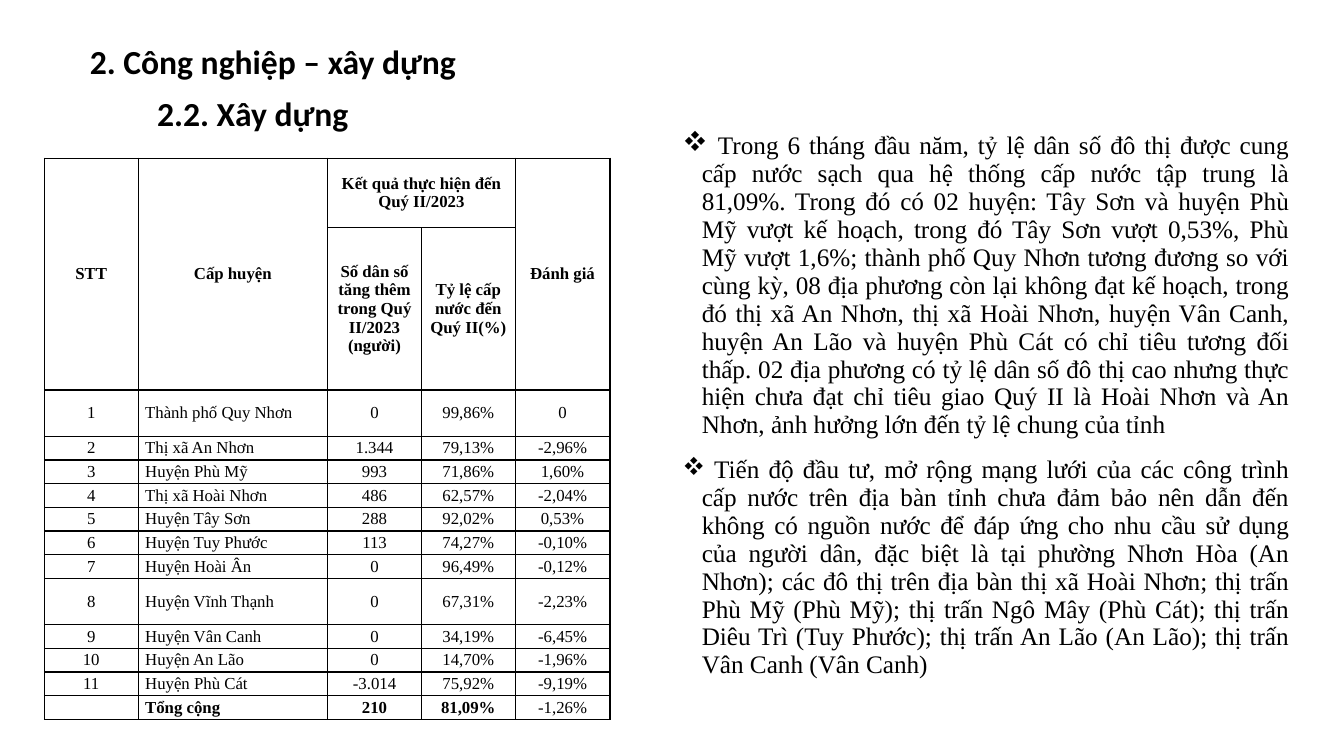
import pptx
import pptx.dml.color
import pptx.enum.text
import pptx.oxml.ns
import pptx.util
from lxml import etree

Inches = pptx.util.Inches
Pt = pptx.util.Pt
Align = pptx.enum.text.PP_ALIGN
Anchor = pptx.enum.text.MSO_ANCHOR
qn = pptx.oxml.ns.qn

HEADING = "2. Công nghiệp – xây dựng"
SUBHEADING = "2.2. Xây dựng"
HEADER_ROWS = [
    ["STT", "Cấp huyện", "Kết quả thực hiện đến Quý II/2023", "", "Đánh giá"],
    ["", "", "Số dân số tăng thêm trong Quý II/2023\v(người)",
     "Tỷ lệ cấp nước đến Quý II(%)", ""],
]
HEADER_SPANS = [((0, 0), (1, 0)), ((0, 1), (1, 1)), ((0, 2), (0, 3)), ((0, 4), (1, 4))]
DISTRICTS = [
    ("Thành phố Quy Nhơn", "0", "99,86%", "0"),
    ("Thị xã An Nhơn", "1.344", "79,13%", "-2,96%"),
    ("Huyện Phù Mỹ", "993", "71,86%", "1,60%"),
    ("Thị xã Hoài Nhơn", "486", "62,57%", "-2,04%"),
    ("Huyện Tây Sơn", "288", "92,02%", "0,53%"),
    ("Huyện Tuy Phước", "113", "74,27%", "-0,10%"),
    ("Huyện Hoài Ân", "0", "96,49%", "-0,12%"),
    ("Huyện Vĩnh Thạnh", "0", "67,31%", "-2,23%"),
    ("Huyện Vân Canh", "0", "34,19%", "-6,45%"),
    ("Huyện An Lão", "0", "14,70%", "-1,96%"),
    ("Huyện Phù Cát", "-3.014", "75,92%", "-9,19%"),
]
TOTAL = ["", "Tổng cộng", "210", "81,09%", "-1,26%"]
COLUMN_WIDTHS = [0.93, 1.88, 0.93, 0.93, 0.94]
TABLE_HEIGHT = 5.57
TALL_ROWS = {0: 0.69, 1: 1.61, 2: 0.46, 9: 0.46}
REMARKS = [
    "Trong 6 tháng đầu năm, tỷ lệ dân số đô thị được cung cấp nước sạch qua hệ thống "
    "cấp nước tập trung là 81,09%. Trong đó có 02 huyện: Tây Sơn và huyện Phù Mỹ vượt "
    "kế hoạch, trong đó Tây Sơn vượt 0,53%, Phù Mỹ vượt 1,6%; thành phố Quy Nhơn tương "
    "đương so với cùng kỳ, 08 địa phương còn lại không đạt kế hoạch, trong đó thị xã An "
    "Nhơn, thị xã Hoài Nhơn, huyện Vân Canh, huyện An Lão và huyện Phù Cát có chỉ tiêu "
    "tương đối thấp. 02 địa phương có tỷ lệ dân số đô thị cao nhưng thực hiện chưa đạt "
    "chỉ tiêu giao Quý II là Hoài Nhơn và An Nhơn, ảnh hưởng lớn đến tỷ lệ chung của tỉnh",
    "Tiến độ đầu tư, mở rộng mạng lưới của các công trình cấp nước trên địa bàn tỉnh chưa "
    "đảm bảo nên dẫn đến không có nguồn nước để đáp ứng cho nhu cầu sử dụng của người dân, "
    "đặc biệt là tại phường Nhơn Hòa (An Nhơn); các đô thị trên địa bàn thị xã Hoài Nhơn; "
    "thị trấn Phù Mỹ (Phù Mỹ); thị trấn Ngô Mây (Phù Cát); thị trấn Diêu Trì (Tuy Phước); "
    "thị trấn An Lão (An Lão); thị trấn Vân Canh (Vân Canh)",
]


def color(value):
    return pptx.dml.color.RGBColor.from_string(value)


class SlideBuilder:
    heading_font = "Calibri"
    body_font = "Times New Roman"
    ink = "000000"

    def __init__(self, slide):
        self.slide = slide

    def style(self, span, size, name, bold=False):
        font = span.font
        font.size, font.name, font.bold = Pt(size), name, bold
        font.color.rgb = color(self.ink)

    def heading(self, box, text, left, top, width):
        box.left, box.top = Inches(left), Inches(top)
        box.width, box.height = Inches(width), Inches(0.5)
        frame = box.text_frame
        frame.text = text
        frame.word_wrap = True
        frame.vertical_anchor = Anchor.TOP
        paragraph = frame.paragraphs[0]
        paragraph.alignment = Align.LEFT
        self.style(paragraph.runs[0], 24, self.heading_font, True)

    def title(self, text, left, top, width):
        self.heading(self.slide.shapes.title, text, left, top, width)

    def subtitle(self, text, left, top, width):
        box = self.slide.shapes.add_textbox(0, 0, 0, 0)
        self.heading(box, text, left, top, width)

    def table(self, left, top, widths, heights):
        frame = self.slide.shapes.add_table(
            len(heights), len(widths), Inches(left), Inches(top),
            Inches(sum(widths)), Inches(sum(heights)))
        table = frame.table
        table.first_row = table.horz_banding = False
        for column, width in zip(table.columns, widths):
            column.width = Inches(width)
        for row, height in zip(table.rows, heights):
            row.height = Inches(height)
        return table

    def frame_cell(self, cell, bordered):
        """Set the four borders, a clear fill and middle anchoring."""
        properties = cell._tc.get_or_add_tcPr()
        for side in ("lnL", "lnR", "lnT", "lnB"):
            line = etree.SubElement(properties, qn(f"a:{side}"), w=str(Pt(1)))
            if bordered:
                fill = etree.SubElement(line, qn("a:solidFill"))
                etree.SubElement(fill, qn("a:srgbClr"), val=self.ink)
            else:
                etree.SubElement(line, qn("a:noFill"))
        cell.fill.background()
        cell.vertical_anchor = Anchor.MIDDLE

    def grid_cell(self, cell, text, bold, alignment):
        self.frame_cell(cell, True)
        cell.margin_left = cell.margin_right = Inches(0.07)
        cell.margin_top = cell.margin_bottom = 0
        cell.text_frame.text = text
        paragraph = cell.text_frame.paragraphs[0]
        paragraph.alignment = alignment
        for span in paragraph.runs:
            self.style(span, 12, self.body_font, bold)
        if not text:
            etree.SubElement(paragraph._p, qn("a:endParaRPr"), sz="1200")

    def district_table(self, left, top):
        numbered = [[str(number), *values] for number, values in enumerate(DISTRICTS, 1)]
        rows = HEADER_ROWS + numbered + [TOTAL]
        spare = TABLE_HEIGHT - sum(TALL_ROWS.values())
        row_height = spare / (len(rows) - len(TALL_ROWS))
        heights = [TALL_ROWS.get(index, row_height) for index in range(len(rows))]
        table = self.table(left, top, COLUMN_WIDTHS, heights)
        header_count, last = len(HEADER_ROWS), len(rows) - 1
        for row, values in enumerate(rows):
            for column, text in enumerate(values):
                header = row < header_count
                bold = header or (row == last and column < 4)
                alignment = Align.LEFT if column == 1 and not header else Align.CENTER
                self.grid_cell(table.cell(row, column), text, bold, alignment)
        for start, end in HEADER_SPANS:
            table.cell(*start).merge(table.cell(*end))

    def remarks(self, left, top, width, height):
        cell = self.table(left, top, [width], [height]).cell(0, 0)
        self.frame_cell(cell, False)
        frame = cell.text_frame
        for index, text in enumerate(REMARKS):
            paragraph = frame.add_paragraph() if index else frame.paragraphs[0]
            paragraph.alignment = Align.JUSTIFY
            paragraph.space_after = Pt(12)
            properties = paragraph._p.get_or_add_pPr()
            properties.set("marL", str(Inches(0.19)))
            properties.set("indent", str(Inches(-0.19)))
            # In Wingdings the letter v is the ❖ bullet.
            etree.SubElement(properties, qn("a:buFont"), typeface="Wingdings", charset="2")
            etree.SubElement(properties, qn("a:buChar"), char="v")
            lead_size = 18 if index else 20
            for part, size in ((" ", lead_size), (text, 18)):
                span = paragraph.add_run()
                span.text = part
                self.style(span, size, self.body_font)


def main():
    deck = pptx.Presentation()
    deck.slide_width, deck.slide_height = Inches(13.33), Inches(7.5)
    builder = SlideBuilder(deck.slides.add_slide(deck.slide_layouts[5]))
    builder.title(HEADING, 0.79, 0.36, 4.35)
    builder.subtitle(SUBHEADING, 1.46, 0.87, 2.46)
    builder.remarks(6.67, 1.01, 6.22, 6)
    builder.district_table(0.44, 1.57)
    deck.save("out.pptx")


if __name__ == "__main__":
    main()
